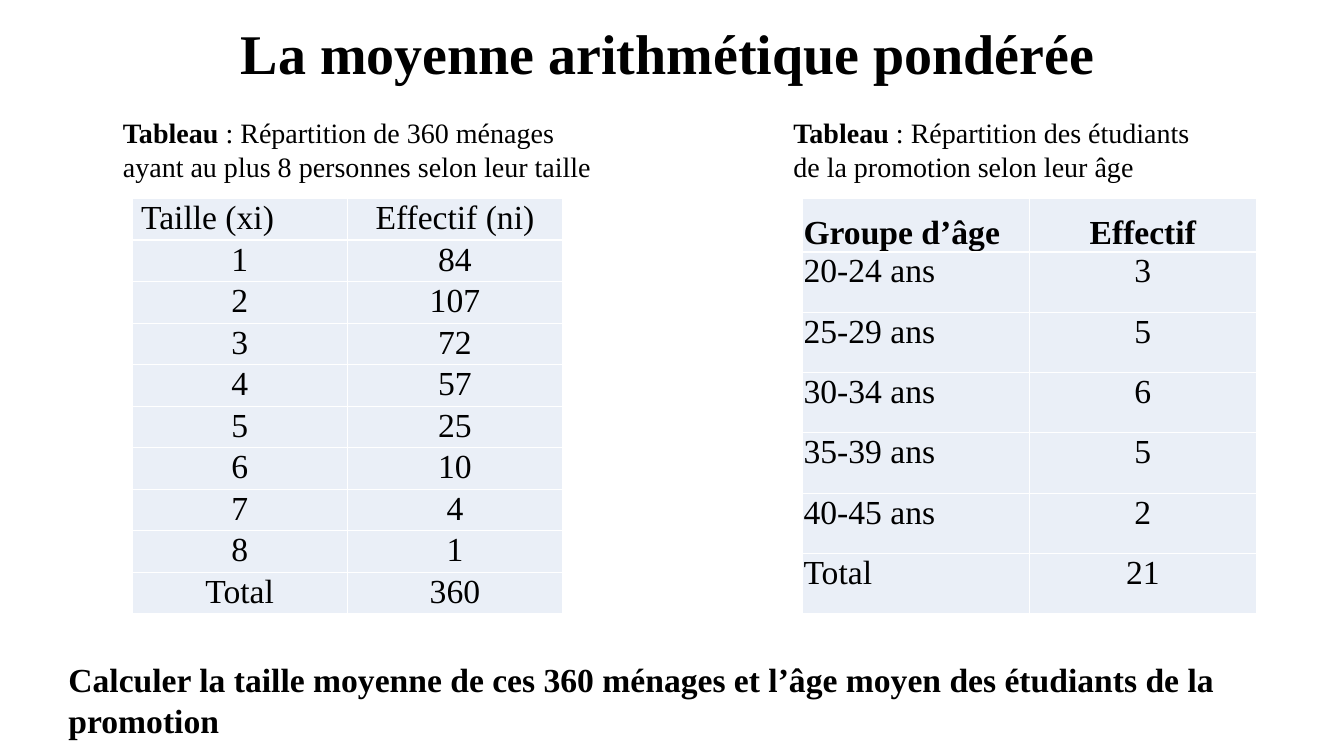
from dataclasses import dataclass

from lxml.etree import SubElement
from pptx import Presentation
from pptx.dml.color import RGBColor
from pptx.enum.text import MSO_ANCHOR as Anchor, PP_ALIGN as Align
from pptx.oxml.ns import qn
from pptx.util import Inches, Pt


@dataclass(frozen=True)
class Theme:
    font: str = "Times New Roman"
    ink: str = "000000"
    cell: str = "EAEFF7"
    border: str = "FFFFFF"
    border_width: int = 1
    title: int = 40
    body: int = 24
    caption: int = 20


THEME = Theme()
CELL_INSET = 0.01

HOUSEHOLDS = [
    ("Taille (xi)", "Effectif (ni)"),
    ("1", "84"), ("2", "107"), ("3", "72"), ("4", "57"),
    ("5", "25"), ("6", "10"), ("7", "4"), ("8", "1"),
    ("Total", "360"),
]
STUDENTS = [
    ("Groupe d’âge", "Effectif"),
    ("20-24 ans", "3"), ("25-29 ans", "5"), ("30-34 ans", "6"),
    ("35-39 ans", "5"), ("40-45 ans", "2"),
    ("Total", "21"),
]


def add_run(paragraph, text, size, bold=False):
    run = paragraph.add_run()
    run.text = text
    run.font.name = THEME.font
    run.font.size = Pt(size)
    run.font.bold = bold
    run.font.color.rgb = RGBColor.from_string(THEME.ink)


def add_text(slide, box, size, runs):
    """Place one wrapped paragraph made of (text, bold) runs."""
    shape = slide.shapes.add_textbox(*map(Inches, box))
    shape.text_frame.word_wrap = True
    for text, bold in runs:
        add_run(shape.text_frame.paragraphs[0], text, size, bold)


def add_caption(slide, box, text):
    add_text(slide, box, THEME.caption, [("Tableau ", True), (text, False)])


def style_cell(cell):
    # Borders come before the fill in the cell properties
    properties = cell._tc.get_or_add_tcPr()
    for side in ("lnL", "lnR", "lnT", "lnB"):
        line = SubElement(properties, qn(f"a:{side}"), w=str(Pt(THEME.border_width)))
        fill = SubElement(line, qn("a:solidFill"))
        SubElement(fill, qn("a:srgbClr"), val=THEME.border)
    cell.fill.solid()
    cell.fill.fore_color.rgb = RGBColor.from_string(THEME.cell)


def add_table(slide, box, rows, header_height):
    """Fill the box with equal columns and equal rows under the header."""
    left, top, width, height = box
    columns = len(rows[0])
    table = slide.shapes.add_table(len(rows), columns, *map(Inches, box)).table
    for column in table.columns:
        column.width = Inches(width / columns)
    body_height = (height - header_height) / (len(rows) - 1)
    for r, values in enumerate(rows):
        table.rows[r].height = Inches(body_height if r else header_height)
        for c, value in enumerate(values):
            cell = table.cell(r, c)
            cell.margin_left = cell.margin_right = cell.margin_top = Inches(CELL_INSET)
            cell.margin_bottom = 0
            style_cell(cell)
    return table


def write_cell(cell, text, align, bold=False):
    paragraph = cell.text_frame.paragraphs[0]
    paragraph.alignment = align
    add_run(paragraph, text, THEME.body, bold)


def add_household_table(slide, box):
    table = add_table(slide, box, HOUSEHOLDS, box[3] / len(HOUSEHOLDS))
    for r, values in enumerate(HOUSEHOLDS):
        for c, value in enumerate(values):
            write_cell(table.cell(r, c), value, Align.CENTER if r else Align.LEFT)
    # Header labels are indented from the left
    for c, inset in enumerate((0.09, 0.28)):
        table.cell(0, c).margin_left = Inches(inset)


def add_student_table(slide, box):
    table = add_table(slide, box, STUDENTS, 0.53)
    for r, values in enumerate(STUDENTS):
        for c, value in enumerate(values):
            cell = table.cell(r, c)
            write_cell(cell, value, Align.CENTER if c else Align.LEFT, bold=r == 0)
            if r == 0:
                cell.vertical_anchor = Anchor.BOTTOM


def main():
    presentation = Presentation()
    presentation.slide_width = Inches(13.33)
    presentation.slide_height = Inches(7.5)
    slide = presentation.slides.add_slide(presentation.slide_layouts[6])

    # Title
    add_text(slide, (2.29, 0.13, 8.75, 0.77), THEME.title,
             [("La moyenne arithmétique pondérée", True)])

    # Households
    add_caption(slide, (1.12, 1.1, 5.02, 0.77),
                ": Répartition de 360 ménages ayant au plus 8 personnes selon leur taille")
    add_household_table(slide, (1.31, 1.97, 4.27, 4.12))

    # Students
    add_caption(slide, (7.77, 1.1, 4.27, 0.77),
                ": Répartition des étudiants de la promotion selon leur âge")
    add_student_table(slide, (7.96, 1.97, 4.5, 4.12))

    # Exercise
    add_text(slide, (0.58, 6.49, 12.38, 0.91), THEME.body,
             [("Calculer la taille moyenne de ces 360 ménages et l’âge moyen "
               "des étudiants de la promotion", True)])

    presentation.save("out.pptx")


if __name__ == "__main__":
    main()
